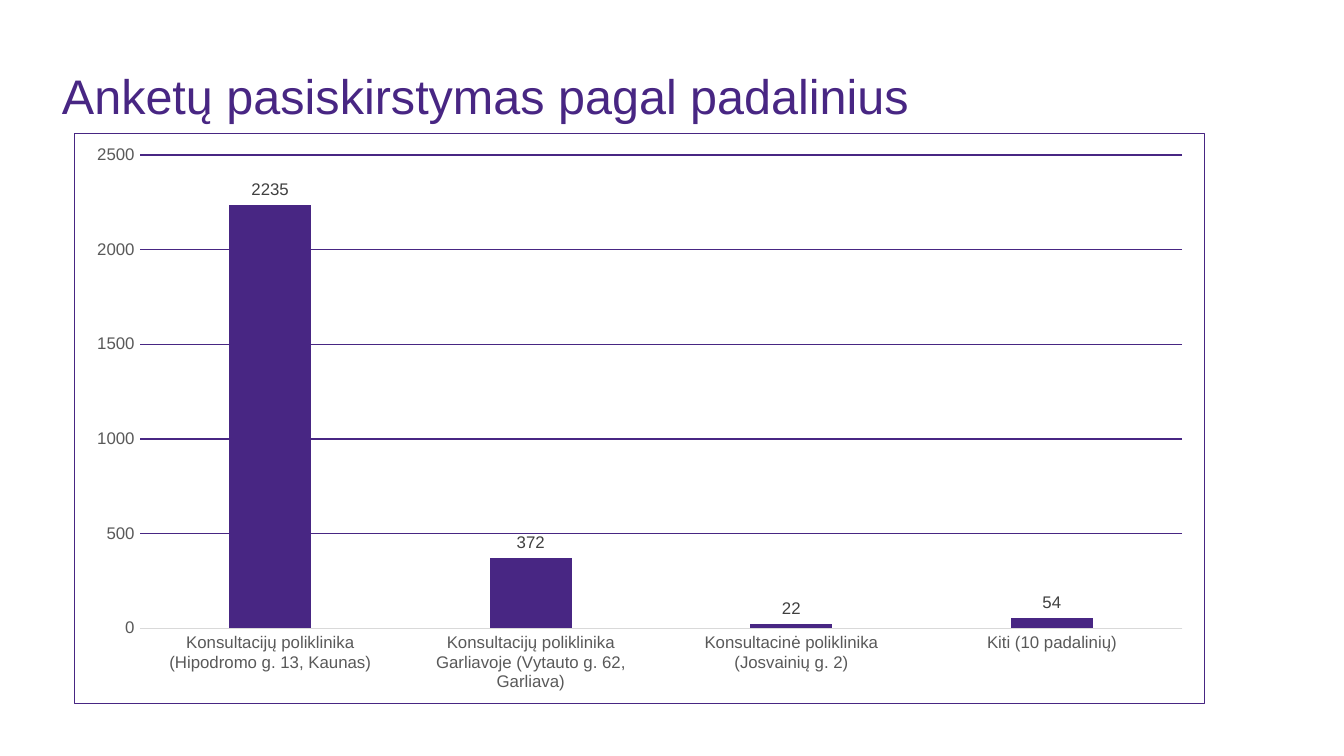
from lxml import etree
from pptx import Presentation
from pptx.chart.data import CategoryChartData
from pptx.dml.color import RGBColor
from pptx.enum.chart import XL_CHART_TYPE, XL_LABEL_POSITION, XL_TICK_MARK
from pptx.enum.text import MSO_ANCHOR, MSO_AUTO_SIZE, PP_ALIGN
from pptx.oxml import parse_xml
from pptx.oxml.ns import nsdecls
from pptx.util import Pt

COLUMNS = XL_CHART_TYPE.COLUMN_CLUSTERED
OUTSIDE = XL_LABEL_POSITION.OUTSIDE_END
NO_TICK = XL_TICK_MARK.NONE
MIDDLE = MSO_ANCHOR.MIDDLE
NO_FIT = MSO_AUTO_SIZE.NONE
LEFT = PP_ALIGN.LEFT

FONT = "Arial"
COLORS = {
    "purple": "482683",
    "axis_text": "595959",
    "label_text": "404040",
    "axis_line": "D9D9D9",
    "white": "FFFFFF",
}
TITLE = "Anketų pasiskirstymas pagal padalinius"
SURVEYS = {
    "Konsultacijų poliklinika (Hipodromo g. 13, Kaunas)": 2235,
    "Konsultacijų poliklinika Garliavoje (Vytauto g. 62, Garliava)": 372,
    "Konsultacinė poliklinika (Josvainių g. 2)": 22,
    "Kiti (10 padalinių)": 54,
}


def color(name):
    return RGBColor.from_string(COLORS[name])


def style_font(font, size, color_name):
    font.name = FONT
    font.size = Pt(size)
    font.bold = False
    font.color.rgb = color(color_name)


def style_line(line, color_name):
    line.color.rgb = color(color_name)
    line.width = Pt(0.75)


def add_title(slide):
    title = slide.shapes.title
    title.left, title.top = Pt(26), Pt(13.7)
    title.width, title.height = Pt(661), Pt(78.5)
    frame = title.text_frame
    frame.word_wrap = True
    frame.auto_size = NO_FIT
    frame.vertical_anchor = MIDDLE
    paragraph = frame.paragraphs[0]
    paragraph.alignment = LEFT
    paragraph.line_spacing = 0.9
    run = paragraph.add_run()
    run.text = TITLE
    style_font(run.font, 26, "purple")


def add_chart_border(chart):
    border = parse_xml(
        f'<c:spPr {nsdecls("c", "a")}><a:noFill/><a:ln w="{Pt(0.75)}">'
        f'<a:solidFill><a:srgbClr val="{COLORS["purple"]}"/></a:solidFill>'
        "</a:ln></c:spPr>"
    )
    chart.element.chart.addnext(border)


def style_axis(axis):
    axis.major_tick_mark = NO_TICK
    axis.minor_tick_mark = NO_TICK
    style_font(axis.tick_labels.font, 9, "axis_text")


def add_survey_chart(slide):
    survey_data = CategoryChartData()
    survey_data.categories = list(SURVEYS)
    survey_data.add_series("Series 1", list(SURVEYS.values()))
    chart = slide.shapes.add_chart(
        COLUMNS, Pt(39.6), Pt(71.3), Pt(606.2), Pt(306), survey_data
    ).chart
    chart.has_legend = False
    chart.has_title = False
    chart.font.name = FONT
    chart.font.size = Pt(10)
    add_chart_border(chart)

    units, counts = chart.category_axis, chart.value_axis
    for axis in (units, counts):
        style_axis(axis)
    style_line(units.format.line, "axis_line")
    counts.format.line.fill.background()
    counts.minimum_scale, counts.maximum_scale, counts.major_unit = 0, 2500, 500
    counts.has_major_gridlines = True
    style_line(counts.major_gridlines.format.line, "purple")

    plot = chart.plots[0]
    plot.vary_by_categories = False
    plot.gap_width = 219
    plot.overlap = -27
    surveys = plot.series[0]
    surveys.format.fill.solid()
    surveys.format.fill.fore_color.rgb = color("purple")
    labels = surveys.data_labels
    labels.show_value = True
    labels.position = OUTSIDE
    style_font(labels.font, 9, "label_text")


def main():
    deck = Presentation()
    deck.slide_width, deck.slide_height = Pt(720), Pt(405)
    slide = deck.slides.add_slide(deck.slide_layouts[5])
    slide.background.fill.solid()
    slide.background.fill.fore_color.rgb = color("white")
    add_title(slide)
    add_survey_chart(slide)
    deck.save("out.pptx")


if __name__ == "__main__":
    main()
